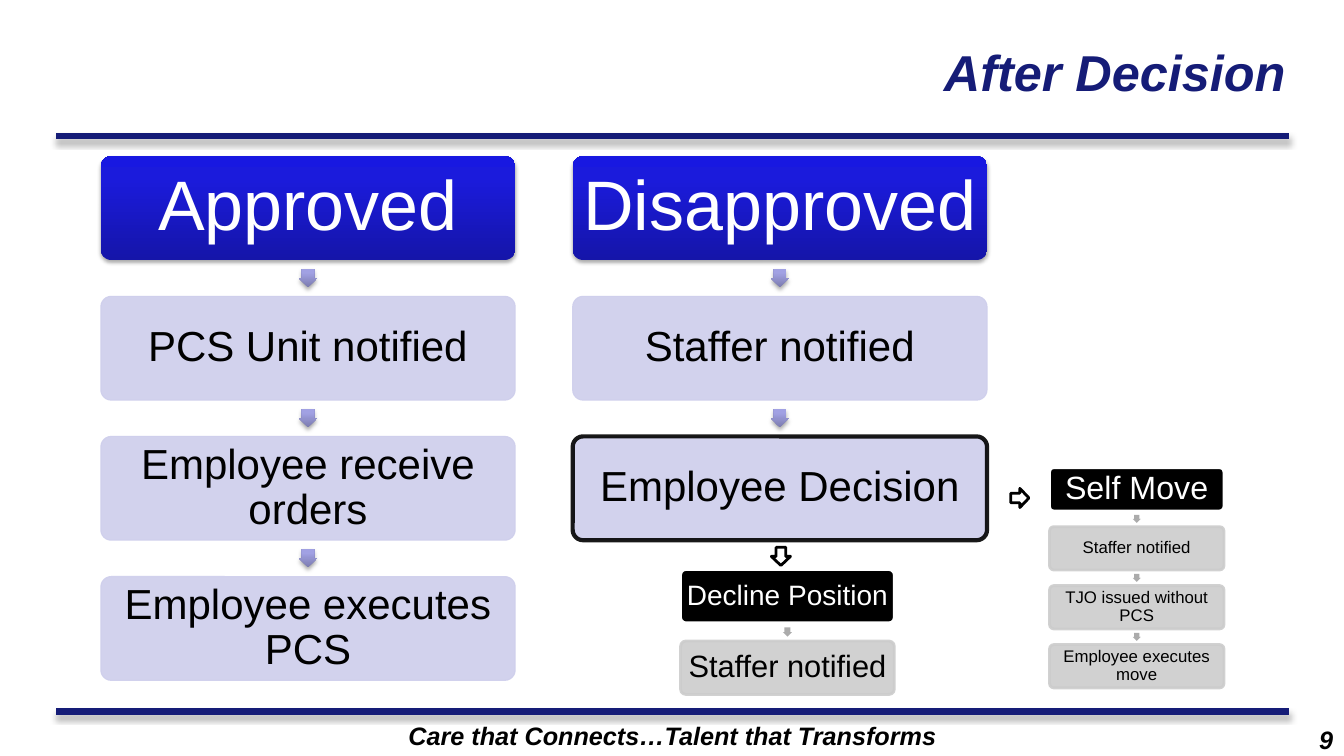
from lxml.etree import SubElement
from pptx import Presentation
from pptx.dml.color import RGBColor
from pptx.enum.shapes import MSO_CONNECTOR, MSO_SHAPE
from pptx.enum.text import MSO_ANCHOR, PP_ALIGN
from pptx.oxml import parse_xml
from pptx.oxml.ns import nsdecls, qn
from pptx.util import Inches, Pt

NAVY, BLACK, WHITE = "151C77", "000000", "FFFFFF"
LAVENDER, GREY = "CECEEC", "CCCCCC"
BLUE_GRADIENT = ("1515A9", "1B1BDC", "1818E1")
ARROW_GRADIENT = ("7C7CAF", "A1A1E3", "A0A0E5")

deck = Presentation()
deck.slide_width, deck.slide_height = Inches(13.33), Inches(7.5)
page = deck.slides.add_slide(deck.slide_layouts[6])


def write_text(box, text, size, color=BLACK, bold=False, align=PP_ALIGN.CENTER,
               anchor=MSO_ANCHOR.MIDDLE, inset=None, spacing=None):
    frame = box.text_frame
    frame.word_wrap = True
    frame.vertical_anchor = anchor
    if inset is not None:
        frame.margin_left = frame.margin_right = Inches(inset)
        frame.margin_top = frame.margin_bottom = Inches(inset)
    para = frame.paragraphs[0]
    para.alignment = align
    para.line_spacing = spacing
    span = para.add_run()
    span.text = text
    font = span.font
    font.name, font.size = "Arial", Pt(size)
    font.bold = font.italic = bold
    font.color.rgb = RGBColor.from_string(color)


def add_block(kind, left, top, width, height, fill, line=None, line_width=2,
              opacity=100, adjustments=()):
    """Draw a preset shape; a fill of three colours is a vertical gradient with a shadow."""
    block = page.shapes.add_shape(
        kind, Inches(left), Inches(top), Inches(width), Inches(height))
    block.shadow.inherit = False
    for index, value in enumerate(adjustments):
        block.adjustments[index] = value
    properties = block.element.spPr
    if isinstance(fill, tuple):
        stops = "".join(
            f'<a:gs pos="{position}000"><a:srgbClr val="{color}"/></a:gs>'
            for position, color in zip((0, 80, 100), fill))
        properties.find(qn("a:prstGeom")).addnext(parse_xml(
            f'<a:gradFill {nsdecls("a")}><a:gsLst>{stops}</a:gsLst>'
            '<a:lin ang="16200000" scaled="0"/></a:gradFill>'))
        shadowed.append((block, 35, 3.1, 1.8))
    else:
        block.fill.solid()
        block.fill.fore_color.rgb = RGBColor.from_string(fill)
    if line:
        block.line.color.rgb = RGBColor.from_string(line)
        block.line.width = Pt(line_width)
    else:
        block.line.fill.background()
    if opacity < 100:
        for color in properties.iter(qn("a:srgbClr")):
            SubElement(color, qn("a:alpha")).set("val", f"{opacity}000")
    return block


# Rules, title, footer and page number
shadowed = []  # shape, opacity, blur, distance
for y in (1.35, 7.06):
    rule = page.shapes.add_connector(
        MSO_CONNECTOR.STRAIGHT, Inches(0.56), Inches(y), Inches(12.78), Inches(y))
    rule.line.color.rgb = RGBColor.from_string(NAVY)
    rule.line.width = Pt(4.5)
    shadowed.append((rule, 40, 4, 3))

for text, place, size, color, align, anchor in (
    ("After Decision", (2.43, 0.08, 10.42, 1.25), 36, NAVY, PP_ALIGN.RIGHT, MSO_ANCHOR.MIDDLE),
    ("Care that Connects…Talent that Transforms", (1.89, 7.1, 9.56, 0.4), 18, BLACK,
     PP_ALIGN.CENTER, MSO_ANCHOR.TOP),
    ("9", (11.65, 7.14, 1.67, 0.33), 18, BLACK, PP_ALIGN.RIGHT, MSO_ANCHOR.TOP),
):
    box = page.shapes.add_textbox(*[Inches(length) for length in place])
    write_text(box, text, size, color, bold=True, align=align, anchor=anchor)

# Flows: a heading block, then steps joined by small arrows
main_style = dict(head_fill=BLUE_GRADIENT, head_line=None, step_fill=LAVENDER, step_line=0.75,
                  arrow_fill=ARROW_GRADIENT, insets=(0.07, 0.04))
side_style = dict(head_fill=BLACK, head_line=WHITE, step_fill=GREY, step_line=2,
                  arrow_fill="ABABAB", insets=(0.03, 0.02))
flows = (
    (1, 1.55, 4.11, 1.03, 1.39, 0.18, main_style, (50, 30),
     ("Approved", "PCS Unit notified", "Employee receive orders", "Employee executes PCS")),
    (5.68, 1.55, 4.11, 1.03, 1.39, 0.18, main_style, (50, 30),
     ("Disapproved", "Staffer notified", "Employee Decision")),
    (10.41, 4.64, 1.73, 0.43, 0.585, 0.08, side_style, (23, 12),
     ("Self Move", "Staffer notified", "TJO issued without PCS", "Employee executes move")),
    (6.75, 5.65, 2.12, 0.53, 0.71, 0.09, side_style, (20, 22),
     ("Decline Position", "Staffer notified")),
)
for left, top, width, height, pitch, arrow, style, sizes, labels in flows:
    for row, label in enumerate(labels):
        y = top + row * pitch
        if row == 0:
            block = add_block(MSO_SHAPE.ROUNDED_RECTANGLE, left, y, width, height,
                              style["head_fill"], style["head_line"], adjustments=(0.1,))
        else:
            add_block(MSO_SHAPE.DOWN_ARROW, left + (width - arrow) / 2,
                      y - (pitch - height + arrow) / 2, arrow, arrow,
                      style["arrow_fill"], adjustments=(0.667, 0.5))
            outlined = label == "Employee Decision"
            block = add_block(MSO_SHAPE.ROUNDED_RECTANGLE, left, y, width, height,
                              style["step_fill"], BLACK if outlined else style["step_fill"],
                              3 if outlined else style["step_line"], 90, (0.1,))
        step = min(row, 1)
        write_text(block, label, sizes[step], BLACK if step else WHITE,
                   inset=style["insets"][step], spacing=0.9)

# Arrows from the employee decision to its two outcomes
for left, top, rotation in ((7.65, 5.43, 0), (10.02, 4.85, 270)):
    branch = add_block(MSO_SHAPE.DOWN_ARROW, left, top, 0.19, 0.18, WHITE, BLACK)
    branch.rotation = rotation

for shape, opacity, blur, distance in shadowed:
    properties = shape.element.spPr
    effects = properties.find(qn("a:effectLst"))
    if effects is None:
        effects = SubElement(properties, qn("a:effectLst"))
    effects.append(parse_xml(
        f'<a:outerShdw {nsdecls("a")} blurRad="{Pt(blur)}" dist="{Pt(distance)}" '
        f'dir="5400000" rotWithShape="0"><a:srgbClr val="{BLACK}">'
        f'<a:alpha val="{opacity}000"/></a:srgbClr></a:outerShdw>'))

deck.save("out.pptx")
